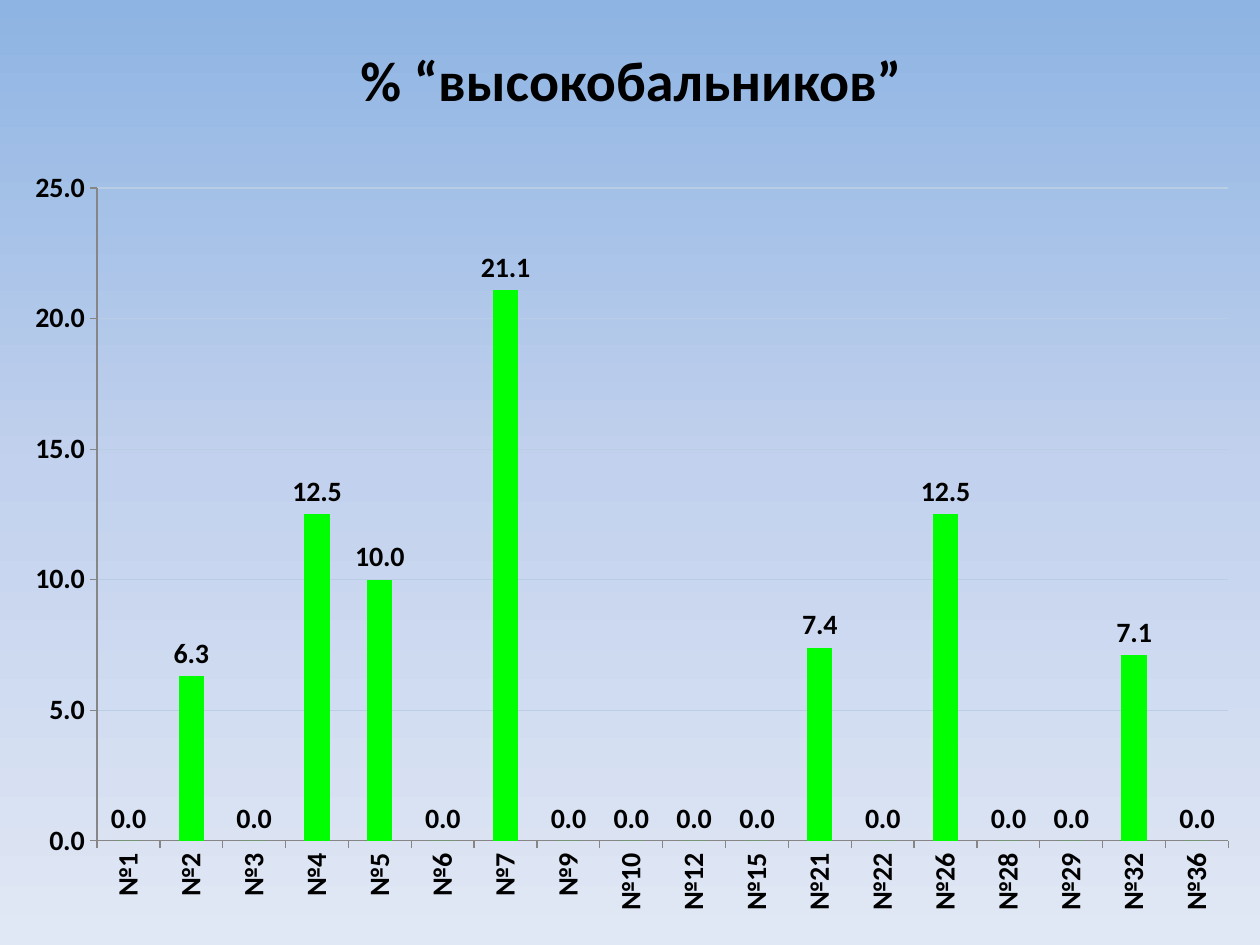
"""Build a slide with a column chart of the share of top scorers by school."""
from copy import deepcopy
from dataclasses import dataclass

from lxml import etree
from pptx import Presentation
from pptx import util as u
from pptx.chart.data import CategoryChartData
from pptx.dml.color import RGBColor
from pptx.enum import chart as charts, text
from pptx.oxml.ns import qn


@dataclass(frozen=True)
class Theme:
    font: str = "Calibri"
    ink: RGBColor = RGBColor(0, 0, 0)
    bar: RGBColor = RGBColor(0, 255, 0)
    grid: RGBColor = RGBColor.from_string("B9CDE5")
    axis: RGBColor = RGBColor.from_string("868686")
    background: tuple = ((0, "8EB4E3"), (0.5, "C2D1ED"), (1, "E1E8F5"))
    title_size: int = 32
    label_size: int = 16
    chart_size: int = 10


theme = Theme()


def style_font(font, size, bold=True):
    font.name = theme.font
    font.size = u.Pt(size)
    font.bold = bold
    font.color.rgb = theme.ink


presentation = Presentation()
presentation.slide_width, presentation.slide_height = u.Pt(720), u.Pt(540)
slide = presentation.slides.add_slide(presentation.slide_layouts[6])

fill = slide.background.fill
fill.gradient()
fill.gradient_angle = 270
stop_list = slide.element.find(".//" + qn("a:gsLst"))
stop_list.append(deepcopy(stop_list[-1]))
for stop, (position, color) in zip(fill.gradient_stops, theme.background):
    stop.position = position
    stop.color.rgb = RGBColor.from_string(color)

title = slide.shapes.add_textbox(u.Pt(36.7), u.Pt(0), u.Pt(648), u.Pt(90))
title.text_frame.word_wrap = True
title.text_frame.vertical_anchor = text.MSO_ANCHOR.MIDDLE
paragraph = title.text_frame.paragraphs[0]
paragraph.alignment = text.PP_ALIGN.CENTER
run = paragraph.add_run()
run.text = "% “высокобальников”"
style_font(run.font, theme.title_size)

scores = {
    "№1": 0, "№2": 6.3, "№3": 0, "№4": 12.5, "№5": 10, "№6": 0,
    "№7": 21.1, "№9": 0, "№10": 0, "№12": 0, "№15": 0, "№21": 7.4,
    "№22": 0, "№26": 12.5, "№28": 0, "№29": 0, "№32": 7.1, "№36": 0,
}
data = CategoryChartData(number_format="0.0")
data.categories = list(scores)
data.add_series("Series 1", list(scores.values()))
chart = slide.shapes.add_chart(
    charts.XL_CHART_TYPE.COLUMN_CLUSTERED,
    u.Pt(0), u.Pt(82.8), u.Pt(720), u.Pt(457.2), data,
).chart
chart.has_title = False
chart.has_legend = False
style_font(chart.font, theme.chart_size, bold=False)

plot = chart.plots[0]
plot.gap_width = 150
plot.vary_by_categories = False
series = plot.series[0]
series.format.fill.solid()
series.format.fill.fore_color.rgb = theme.bar
labels = series.data_labels
labels.show_value = True
labels.number_format = "0.0"
labels.number_format_is_linked = False
labels.position = charts.XL_LABEL_POSITION.OUTSIDE_END
style_font(labels.font, theme.label_size)

for axis in (chart.category_axis, chart.value_axis):
    axis.major_tick_mark = charts.XL_TICK_MARK.OUTSIDE
    axis.minor_tick_mark = charts.XL_TICK_MARK.NONE
    axis.format.line.color.rgb = theme.axis
    axis.format.line.width = u.Pt(0.75)
    style_font(axis.tick_labels.font, theme.label_size)

category_body = chart.category_axis._element.find(".//" + qn("a:bodyPr"))
category_body.set("rot", "-5400000")
category_body.set("vert", "horz")

value_axis = chart.value_axis
value_axis.minimum_scale, value_axis.maximum_scale = 0, 25
value_axis.major_unit = 5
value_axis.tick_labels.number_format = "0.0"
value_axis.tick_labels.number_format_is_linked = False
value_axis.has_major_gridlines = True
value_axis.major_gridlines.format.line.color.rgb = theme.grid
value_axis.major_gridlines.format.line.width = u.Pt(0.75)

plot_area = chart._chartSpace.find(".//" + qn("c:plotArea"))
for layout in plot_area.findall(qn("c:layout")):
    plot_area.remove(layout)
layout = etree.Element(qn("c:layout"))
manual = etree.SubElement(layout, qn("c:manualLayout"))
for tag, value in (
    ("layoutTarget", "inner"), ("xMode", "edge"), ("yMode", "edge"),
    ("x", "0.077"), ("y", "0.054"), ("w", "0.898"), ("h", "0.816"),
):
    etree.SubElement(manual, qn("c:" + tag)).set("val", value)
plot_area.insert(0, layout)

presentation.save("out.pptx")
